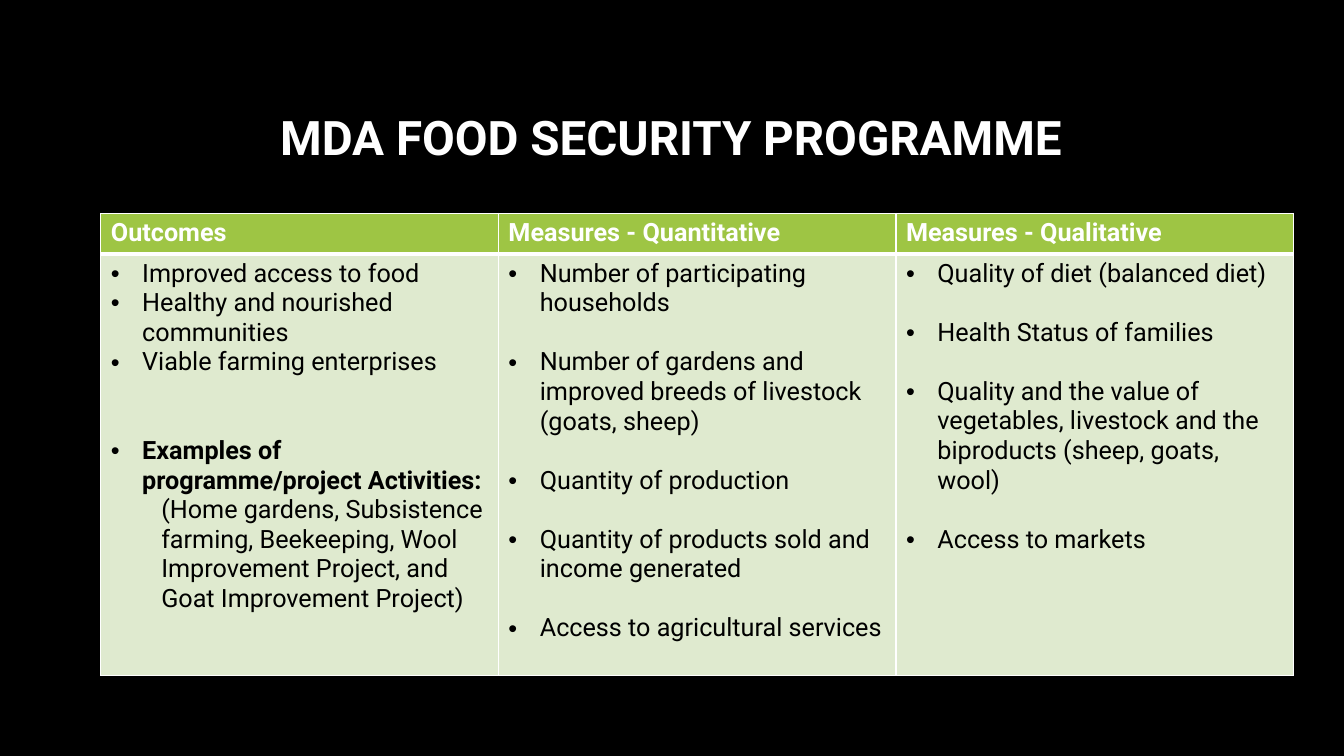
"""Build the food security programme slide with its table of outcomes and measures."""
from dataclasses import dataclass

import lxml.etree
import pptx
import pptx.dml.color
import pptx.enum.text
import pptx.oxml
import pptx.oxml.ns
import pptx.util

Cm = pptx.util.Cm
Pt = pptx.util.Pt
qn = pptx.oxml.ns.qn

BLACK, WHITE = "000000", "FFFFFF"
HEADER_FILL, BODY_FILL = "9EC544", "DFEACF"
LINE_GAP = 21.1
COLUMN_WIDTH = Cm(10.02)
ROW_HEIGHTS = (Cm(1), Cm(10.62))


@dataclass
class Item:
    text: str
    gap_lines: int = 0
    bold: bool = False
    bullet: bool = True


@dataclass
class Column:
    heading: str
    items: list[Item]


COLUMNS = [
    Column("Outcomes", [
        Item("Improved access to food"),
        Item("Healthy and nourished communities"),
        Item("Viable farming enterprises"),
        Item("Examples of programme/project Activities:", gap_lines=2, bold=True),
        Item("(Home gardens, Subsistence farming, Beekeeping, Wool Improvement Project, "
             "and Goat Improvement Project)", bullet=False),
    ]),
    Column("Measures - Quantitative", [
        Item("Number of participating households"),
        Item("Number of gardens and improved breeds of livestock (goats, sheep)", 1),
        Item("Quantity of production", 1),
        Item("Quantity of products sold and income generated", 1),
        Item("Access to agricultural services", 1),
    ]),
    Column("Measures - Qualitative", [
        Item("Quality of diet (balanced diet)"),
        Item("Health Status of families", 1),
        Item("Quality and the value of vegetables, livestock and the biproducts "
             "(sheep, goats, wool)", 1),
        Item("Access to markets", 1),
    ]),
]


def color(value: str) -> pptx.dml.color.RGBColor:
    """Turn a hex string into a colour."""
    return pptx.dml.color.RGBColor.from_string(value)


def write(para, text: str, size: int, fill: str, bold: bool) -> None:
    """Add one formatted span of text to a paragraph."""
    span = para.add_run()
    span.text = text
    formats = {"name": "Roboto", "size": Pt(size), "bold": bold}
    for name, value in formats.items():
        setattr(span.font, name, value)
    span.font.color.rgb = color(fill)


def indent(para, item: Item) -> None:
    """Set the indent of an item and its bullet, if it has one."""
    properties = para._p.get_or_add_pPr()
    left, first = (Cm(0.79), -Cm(0.79)) if item.bullet else (Cm(1.27), 0)
    properties.set("marL", str(left))
    properties.set("indent", str(first))
    if item.bullet:
        lxml.etree.SubElement(properties, qn("a:buFont"), typeface="Arial")
        lxml.etree.SubElement(properties, qn("a:buChar"), char="•")
    else:
        para.level = 1
        lxml.etree.SubElement(properties, qn("a:buNone"))


def style_cell(cell, fill: str, top: int, bottom: int) -> None:
    """Fill a cell and draw its white borders."""
    cell.fill.solid()
    cell.fill.fore_color.rgb = color(fill)
    properties = cell._tc.get_or_add_tcPr()
    widths = {"lnL": 1, "lnR": 1, "lnT": top, "lnB": bottom}
    for position, (side, width) in enumerate(widths.items()):
        line = lxml.etree.Element(qn(f"a:{side}"), w=str(Pt(width)))
        solid = lxml.etree.SubElement(line, qn("a:solidFill"))
        lxml.etree.SubElement(solid, qn("a:srgbClr"), val=WHITE)
        properties.insert(position, line)


def add_title(page) -> None:
    """Add the centred title."""
    box = page.shapes.add_textbox(Cm(2.54), Cm(1.7), Cm(28.75), Cm(3.68))
    frame = box.text_frame
    frame.word_wrap = True
    frame.vertical_anchor = pptx.enum.text.MSO_ANCHOR.MIDDLE
    para = frame.paragraphs[0]
    para.alignment = pptx.enum.text.PP_ALIGN.CENTER
    para.line_spacing = 0.9
    write(para, "MDA FOOD SECURITY PROGRAMME", 34, WHITE, True)


def add_measures(page) -> None:
    """Add the table of outcomes and measures."""
    table = page.shapes.add_table(
        len(ROW_HEIGHTS), len(COLUMNS), Cm(2.54), Cm(5.38),
        COLUMN_WIDTH * len(COLUMNS), sum(ROW_HEIGHTS)).table
    table.horz_banding = False
    for row, height in zip(table.rows, ROW_HEIGHTS):
        row.height = height
    for number, column in enumerate(COLUMNS):
        table.columns[number].width = COLUMN_WIDTH
        header, body = table.cell(0, number), table.cell(1, number)
        style_cell(header, HEADER_FILL, top=1, bottom=3)
        style_cell(body, BODY_FILL, top=3, bottom=1)
        write(header.text_frame.paragraphs[0], column.heading, 18, WHITE, True)
        for order, item in enumerate(column.items):
            frame = body.text_frame
            para = frame.add_paragraph() if order else frame.paragraphs[0]
            indent(para, item)
            if item.gap_lines:
                para.space_before = Pt(LINE_GAP * item.gap_lines)
            write(para, item.text, 18, BLACK, item.bold)


def main() -> None:
    """Create the deck and save it."""
    deck = pptx.Presentation()
    deck.slide_width, deck.slide_height = Cm(33.87), Cm(19.05)
    page = deck.slides.add_slide(deck.slide_layouts[6])
    page.background.fill.solid()
    page.background.fill.fore_color.rgb = color(BLACK)
    add_title(page)
    add_measures(page)
    deck.save("out.pptx")


if __name__ == "__main__":
    main()
